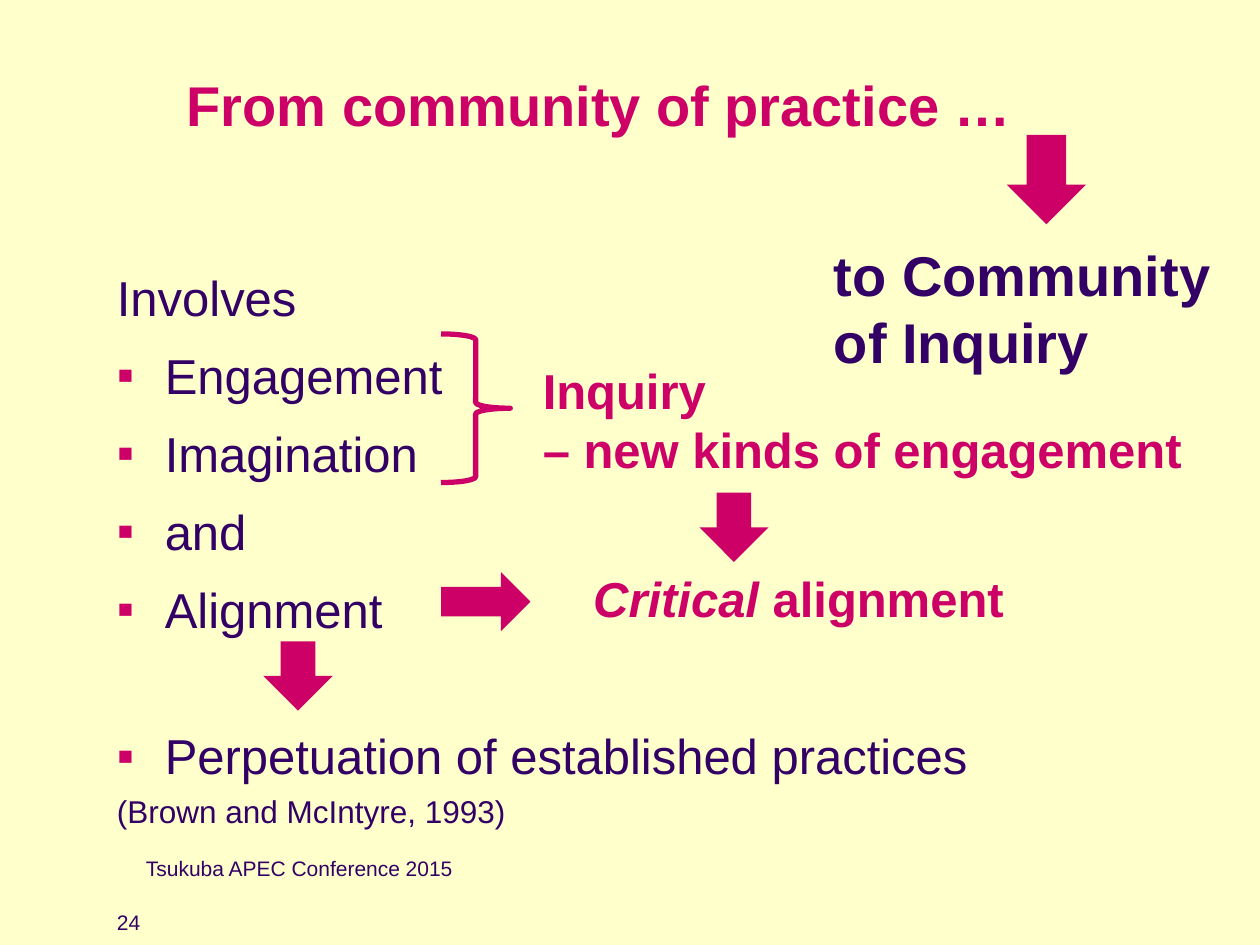
from dataclasses import dataclass
from typing import Any

from lxml.etree import SubElement
from pptx import Presentation
from pptx.dml.color import RGBColor
from pptx.enum.shapes import MSO_SHAPE
from pptx.enum.text import MSO_ANCHOR, PP_ALIGN
from pptx.oxml.ns import qn
from pptx.util import Inches, Pt


def color(value):
    return RGBColor.from_string(value)


@dataclass
class SlideBuilder:
    presentation: Any
    slide: Any = None
    columns: int = 100
    rows: int = 75
    font: str = "Arial"
    paper: str = "FFFFCC"
    accent: str = "CC0066"
    ink: str = "330066"

    def add_slide(self):
        self.slide = self.presentation.slides.add_slide(self.presentation.slide_layouts[6])
        fill = self.slide.background.fill
        fill.solid()
        fill.fore_color.rgb = color(self.paper)

    def place(self, column, row, width, height):
        column_width = self.presentation.slide_width / self.columns
        row_height = self.presentation.slide_height / self.rows
        return (round(column * column_width), round(row * row_height),
                round(width * column_width), round(height * row_height))

    def style(self, paragraph, size, text_color, bold=False):
        for run in paragraph.runs:
            run.font.name = self.font
            run.font.size = Pt(size)
            run.font.bold = bold
            run.font.color.rgb = color(text_color)

    def text(self, area, content, size, text_color=None, bold=False):
        shape = self.slide.shapes.add_textbox(*self.place(*area))
        frame = shape.text_frame
        frame.word_wrap = True
        frame.text = content
        for paragraph in frame.paragraphs:
            self.style(paragraph, size, text_color or self.ink, bold)
        return frame

    def title(self, area, content, right_inset):
        frame = self.text(area, content, 32, self.accent, True)
        frame.vertical_anchor = MSO_ANCHOR.MIDDLE
        frame.margin_right = Inches(right_inset)
        frame.paragraphs[0].alignment = PP_ALIGN.CENTER

    def bullet(self, paragraph):
        properties = paragraph._p.get_or_add_pPr()
        properties.set("marL", str(Inches(0.38)))
        properties.set("indent", str(-Inches(0.38)))
        bullet_color = SubElement(properties, qn("a:buClr"))
        SubElement(bullet_color, qn("a:srgbClr")).set("val", self.accent)
        SubElement(properties, qn("a:buFont")).set("typeface", self.font)
        SubElement(properties, qn("a:buChar")).set("char", "▪")

    def outline(self, area, items):
        frame = self.text(area, "\n".join(item[0] for item in items), 28)
        frame.margin_top = 0
        for paragraph, (_, size, bulleted, before, after) in zip(frame.paragraphs, items):
            if bulleted:
                self.bullet(paragraph)
            paragraph.space_before = Pt(before)
            paragraph.space_after = Pt(after)
            self.style(paragraph, size, self.ink)

    def arrow(self, kind, area):
        shape = self.slide.shapes.add_shape(kind, *self.place(*area))
        shape.shadow.inherit = False
        shape.fill.solid()
        shape.fill.fore_color.rgb = color(self.accent)
        shape.line.fill.background()

    def brace(self, area):
        shape = self.slide.shapes.add_shape(MSO_SHAPE.RIGHT_BRACE, *self.place(*area))
        shape.shadow.inherit = False
        shape.fill.background()
        shape.line.color.rgb = color(self.accent)
        shape.line.width = Pt(3)


def main():
    presentation = Presentation()
    presentation.slide_width = Inches(10)
    presentation.slide_height = Inches(7.5)
    builder = SlideBuilder(presentation)
    builder.add_slide()

    builder.title((7.5, 2.9, 85, 10.8), "From community of practice …", 0.58)
    modes = ["Engagement", "Imagination", "and", "Alignment"]
    builder.outline((8.3, 21.2, 70, 43.3), [
        ("Involves", 28, False, 0, 4),
        *[(mode, 28, True, 7, 4) for mode in modes],
        ("Perpetuation of established practices", 28, True, 46, 0),
        ("(Brown and McIntyre, 1993)", 18, False, 4, 0),
    ])
    builder.text((10.6, 67.4, 62.5, 4.2), "Tsukuba APEC Conference 2015", 12)

    builder.brace((35, 26.5, 5.5, 11.8))
    builder.text((42.1, 28.1, 53.4, 10.4), "Inquiry\n– new kinds of engagement",
                 28, builder.accent, True)
    critical = builder.text((46.1, 44.6, 35, 5.7), "Critical", 28, builder.accent, True)
    alignment = critical.paragraphs[0]
    alignment.runs[0].font.italic = True
    alignment.add_run().text = " alignment"
    builder.style(alignment, 28, builder.accent, True)
    builder.text((65.2, 18.6, 34.8, 11.8), "to Community\vof Inquiry", 32, bold=True)

    for area in [(20.9, 50.9, 5.5, 5.5), (55.5, 39.1, 5.5, 5.5), (79.9, 10.7, 6.3, 7.1)]:
        builder.arrow(MSO_SHAPE.DOWN_ARROW, area)
    builder.arrow(MSO_SHAPE.RIGHT_ARROW, (35, 45.4, 7.1, 4.7))
    builder.text((8.3, 71.7, 6.7, 2.1), "24", 12)

    presentation.save("out.pptx")


if __name__ == "__main__":
    main()
